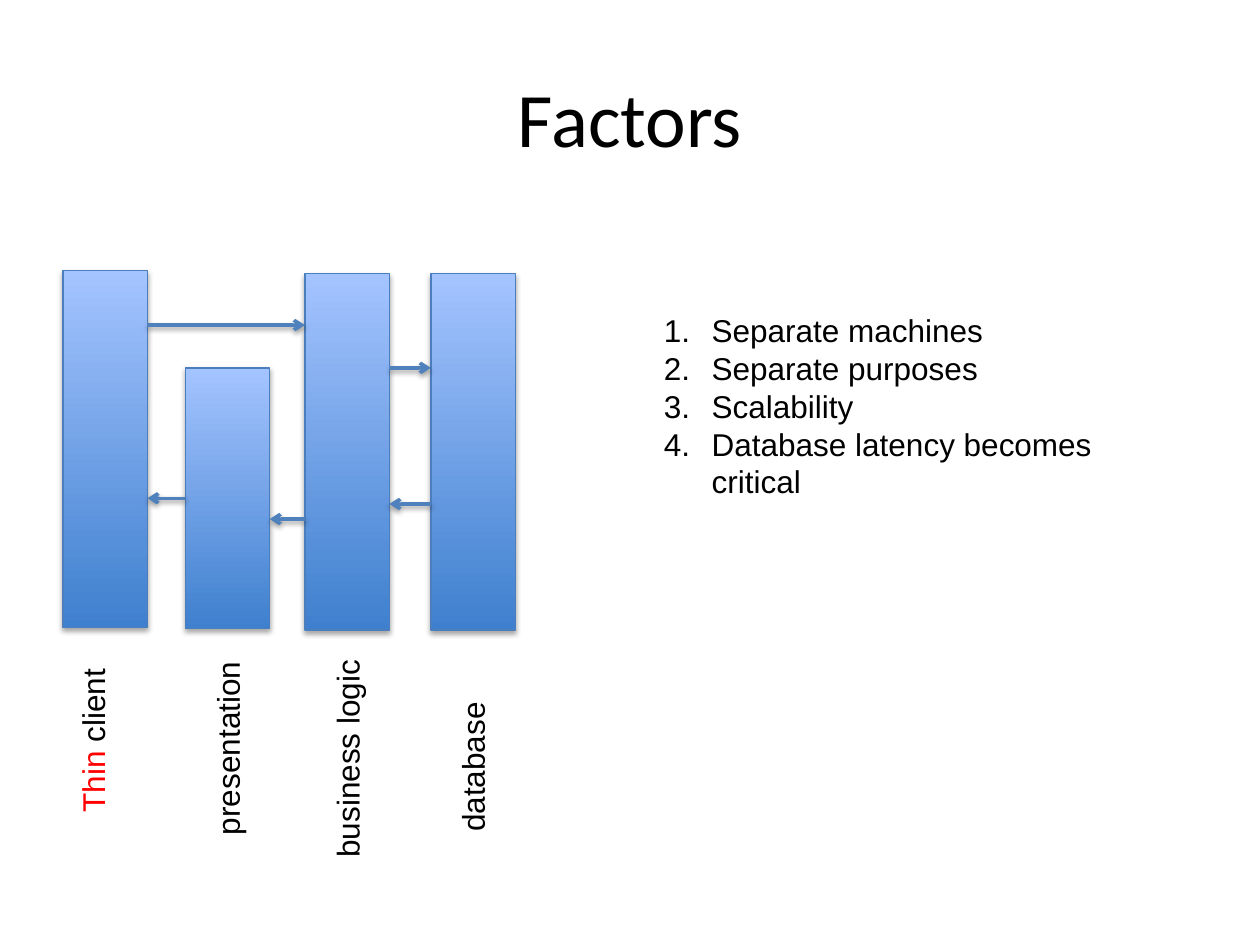
"""Build the Factors slide: four tier bars, message arrows and a numbered list."""
from lxml import etree
from pptx import Presentation
from pptx.dml.color import RGBColor
from pptx.enum.shapes import MSO_CONNECTOR, MSO_SHAPE
from pptx.enum.text import MSO_ANCHOR, MSO_AUTO_SIZE, PP_ALIGN
from pptx.oxml.ns import qn
from pptx.util import Inches, Pt

RECTANGLE = MSO_SHAPE.RECTANGLE
STRAIGHT = MSO_CONNECTOR.STRAIGHT
MIDDLE = MSO_ANCHOR.MIDDLE
CENTER = PP_ALIGN.CENTER
GROW = MSO_AUTO_SIZE.SHAPE_TO_FIT_TEXT
LEFT_SIDE = 1
COLORS = {
    "text": "000000",
    "accent": "FF0000",
    "bar_bottom": "3F80CE",
    "bar_top": "A4C4FF",
    "bar_line": "4B7EBC",
    "arrow": "4F81BD",
    "shadow": "000000",
}
BAR_WIDTH = 0.67
LABEL_HEIGHT = 0.4


def set_font(font, size, name="Arial", color="text"):
    font.size = Pt(size)
    font.name = name
    font.color.rgb = RGBColor.from_string(COLORS[color])


def add_shadow(shape, distance, opacity):
    effects = etree.SubElement(shape._element.spPr, qn("a:effectLst"))
    shadow = etree.SubElement(
        effects, qn("a:outerShdw"), blurRad=str(Pt(3.1)), dist=str(Pt(distance)),
        dir="5400000", rotWithShape="0")
    color = etree.SubElement(shadow, qn("a:srgbClr"), val=COLORS["shadow"])
    etree.SubElement(color, qn("a:alpha"), val=str(opacity * 1000))


deck = Presentation()
deck.slide_width, deck.slide_height = Inches(10), Inches(7.5)
page = deck.slides.add_slide(deck.slide_layouts[6])

title = page.shapes.add_textbox(Inches(0.5), Inches(0.3), Inches(9), Inches(1.25))
title.text_frame.word_wrap = True
title.text_frame.vertical_anchor = MIDDLE
para = title.text_frame.paragraphs[0]
para.text = "Factors"
para.alignment = CENTER
set_font(para.font, 44, "Calibri")

bars = []
for left, top, height in [(0.5, 2.15, 2.83), (1.47, 2.92, 2.07),
                          (2.42, 2.17, 2.83), (3.42, 2.17, 2.83)]:
    bar = page.shapes.add_shape(
        RECTANGLE, Inches(left), Inches(top), Inches(BAR_WIDTH), Inches(height))
    bar.fill.gradient()
    bar.fill.gradient_angle = 90
    for stop, name in zip(bar.fill.gradient_stops, ("bar_bottom", "bar_top")):
        stop.color.rgb = RGBColor.from_string(COLORS[name])
    bar.line.color.rgb = RGBColor.from_string(COLORS["bar_line"])
    bar.line.width = Pt(0.75)
    add_shadow(bar, 1.8, 35)
    bars.append(bar)

for left, top, width, spans in [
    (0.06, 5.67, 1.35, [("Thin", "accent"), (" client", "text")]),
    (1.01, 5.73, 1.59, [("presentation", "text")]),
    (1.86, 5.81, 1.79, [("business logic", "text")]),
    (3.13, 5.88, 1.24, [("database", "text")]),
]:
    label = page.shapes.add_textbox(
        Inches(left), Inches(top), Inches(width), Inches(LABEL_HEIGHT))
    label.rotation = 270
    label.text_frame.word_wrap = False
    label.text_frame.auto_size = GROW
    para = label.text_frame.paragraphs[0]
    set_font(para.font, 18)
    for text, color in spans:
        span = para.add_run()
        span.text = text
        if color != "text":
            span.font.color.rgb = RGBColor.from_string(COLORS[color])

for start, end, y, source in [
    (1.17, 2.42, 2.58, None),
    (3.09, 3.42, 2.92, None),
    (3.42, 3.09, 4, None),
    (2.42, 2.14, 4.12, None),
    (1.47, 1.17, 3.955, bars[1]),
]:
    arrow = page.shapes.add_connector(
        STRAIGHT, Inches(start), Inches(y), Inches(end), Inches(y))
    if source is not None:
        arrow.begin_connect(source, LEFT_SIDE)
        arrow.end_y = arrow.begin_y
    arrow.line.color.rgb = RGBColor.from_string(COLORS["arrow"])
    arrow.line.width = Pt(2)
    etree.SubElement(arrow.line._get_or_add_ln(), qn("a:tailEnd"), type="arrow")
    add_shadow(arrow, 1.6, 38)

factors = page.shapes.add_textbox(Inches(5.17), Inches(2.42), Inches(3.92), Inches(1.92))
frame = factors.text_frame
frame.word_wrap = True
frame.auto_size = GROW
items = ["Separate machines", "Separate purposes", "Scalability",
         "Database latency becomes critical"]
frame.text = "\n".join(items)
for para in frame.paragraphs:
    set_font(para.font, 18)
    properties = para._p.get_or_add_pPr()
    properties.set("marL", str(Inches(0.38)))
    properties.set("indent", str(Inches(-0.38)))
    numbering = etree.Element(qn("a:buAutoNum"), type="arabicPeriod")
    properties.insert(0, numbering)

deck.save("out.pptx")
